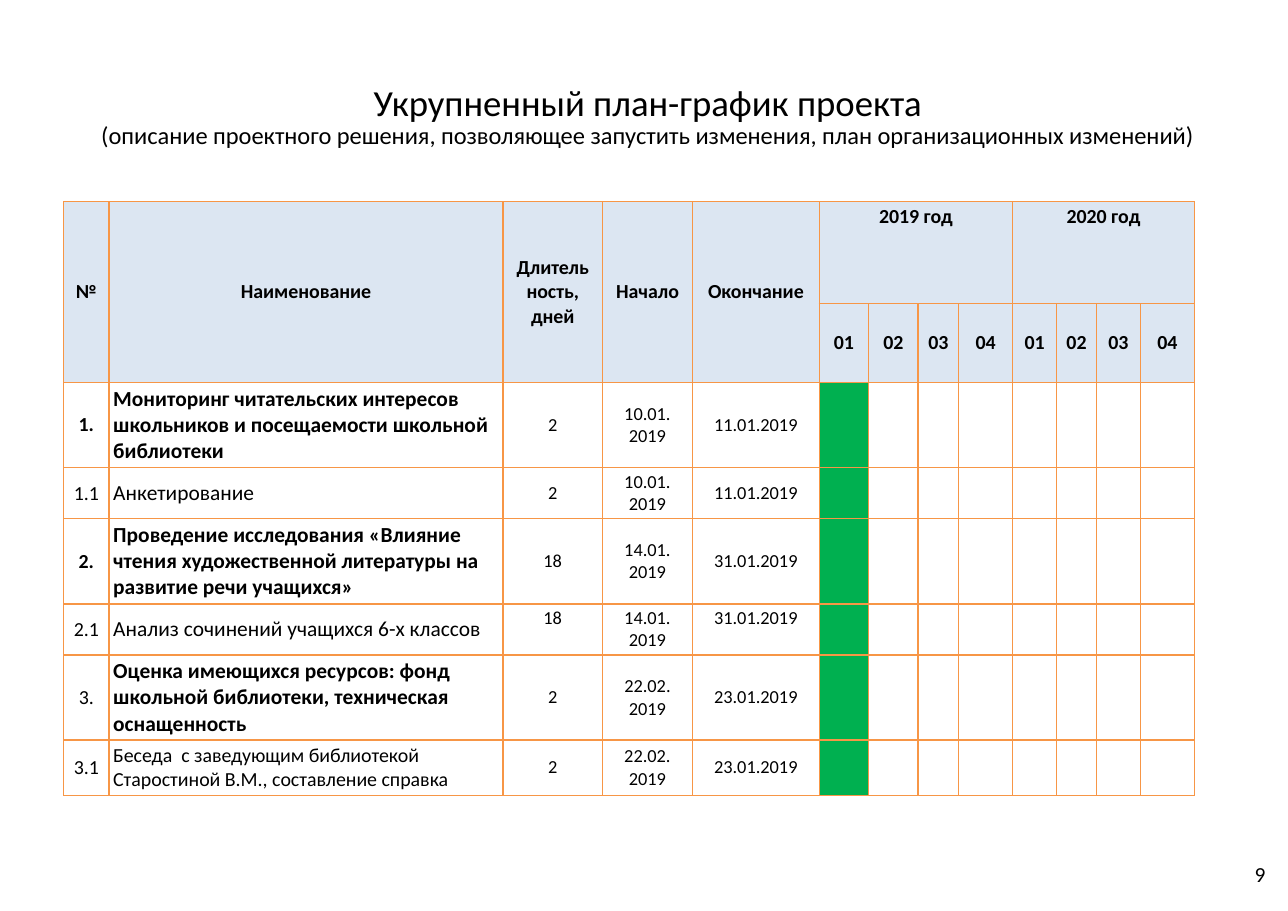
from dataclasses import dataclass

from lxml import etree
from pptx import Presentation
from pptx import util as u
from pptx.dml.color import RGBColor
from pptx.enum import text
from pptx.oxml import ns

FONT = "Calibri"
BLACK, WHITE = "000000", "FFFFFF"
HEADER_FILL, DONE_FILL, BORDER = "DCE6F2", "00B050", "F79646"
LEFT, CENTER, RIGHT = text.PP_ALIGN.LEFT, text.PP_ALIGN.CENTER, text.PP_ALIGN.RIGHT
TOP, MIDDLE = text.MSO_ANCHOR.TOP, text.MSO_ANCHOR.MIDDLE

COL_WIDTHS = [1.04, 9.09, 2.29, 2.08, 2.92, 1.14, 1.14, 0.94, 1.24, 1.02, 0.91, 1.02, 1.24]
ROW_HEIGHTS = [2.35, 1.82, 1.96, 1.18, 1.96, 1.18, 1.96, 1.27]
HEADINGS = ["№", "Наименование", "Длительность, дней", "Начало", "Окончание"]
YEARS = ["2019 год", "2020 год"]
QUARTERS = ["01", "02", "03", "04"]
WIDE, NARROW = 0.25, 0.1


@dataclass
class Line:
    text: str
    size: float
    bold: bool = False


@dataclass
class Task:
    number: str
    name: str
    days: str
    start: str
    end: str
    number_bold: bool = False
    name_bold: bool = False
    name_size: float = 14
    anchor: text.MSO_ANCHOR = MIDDLE


TASKS = [
    Task("1.", "Мониторинг читательских интересов школьников и посещаемости школьной библиотеки",
         "2", "10.01.\n2019", "11.01.2019", number_bold=True, name_bold=True),
    Task("1.1", "Анкетирование", "2", "10.01.\n2019", "11.01.2019"),
    Task("2.", "Проведение исследования «Влияние чтения художественной литературы "
         "на развитие речи учащихся»",
         "18", "14.01.\n2019", "31.01.2019", number_bold=True, name_bold=True),
    Task("2.1", "Анализ сочинений учащихся 6-х классов", "18", "14.01.\n2019", "31.01.2019",
         anchor=TOP),
    Task("3.", "Оценка имеющихся ресурсов: фонд школьной библиотеки, техническая оснащенность",
         "2", "22.02. 2019", "23.01.2019", name_bold=True),
    Task("3.1", "Беседа  с заведующим библиотекой Старостиной В.М., составление справка",
         "2", "22.02.\n2019", "23.01.2019", name_size=13),
]


def rgb(value: str) -> RGBColor:
    return RGBColor.from_string(value)


def write(tf, lines: list[Line], align, spacing: float = 1.0) -> None:
    for i, line in enumerate(lines):
        p = tf.add_paragraph() if i else tf.paragraphs[0]
        p.alignment = align
        p.line_spacing = spacing
        r = p.add_run()
        r.text = line.text
        r.font.name = FONT
        r.font.size = u.Pt(line.size)
        r.font.bold = line.bold
        r.font.color.rgb = rgb(BLACK)


def add_text(s, left: float, top: float, width: float, height: float,
             lines: list[Line], align, spacing: float = 1.0) -> None:
    sp = s.shapes.add_textbox(u.Cm(left), u.Cm(top), u.Cm(width), u.Cm(height))
    tf = sp.text_frame
    tf.word_wrap = True
    tf.vertical_anchor = MIDDLE
    tf.margin_left = tf.margin_right = u.Cm(0.28)
    tf.margin_top = tf.margin_bottom = u.Cm(0.15)
    write(tf, lines, align, spacing)


def style_cell(cell, fill: str) -> None:
    """Outline the cell on all four sides and fill it."""
    tc_pr = cell._tc.get_or_add_tcPr()
    for side in ("a:lnL", "a:lnR", "a:lnT", "a:lnB"):
        ln = etree.SubElement(tc_pr, ns.qn(side), w=str(u.Pt(1)))
        solid = etree.SubElement(ln, ns.qn("a:solidFill"))
        etree.SubElement(solid, ns.qn("a:srgbClr"), val=BORDER)
    cell.fill.solid()
    cell.fill.fore_color.rgb = rgb(fill)


def fill_cell(cell, content: str, size: float, bold: bool = False, align=CENTER,
              side: float = WIDE, anchor=MIDDLE) -> None:
    cell.margin_left = cell.margin_right = u.Cm(side)
    cell.margin_top = cell.margin_bottom = u.Cm(0.07)
    cell.vertical_anchor = anchor
    write(cell.text_frame, [Line(t, size, bold) for t in content.split("\n")], align)


def add_header(table) -> None:
    for col, heading in enumerate(HEADINGS):
        table.cell(0, col).merge(table.cell(1, col))
        fill_cell(table.cell(0, col), heading, 13, True)
    for i, year in enumerate(YEARS):
        first = len(HEADINGS) + i * len(QUARTERS)
        table.cell(0, first).merge(table.cell(0, first + len(QUARTERS) - 1))
        fill_cell(table.cell(0, first), year, 13, True, anchor=TOP)
        for j, quarter in enumerate(QUARTERS):
            fill_cell(table.cell(1, first + j), quarter, 13, True, side=NARROW)


def add_task(table, row: int, task: Task) -> None:
    fill_cell(table.cell(row, 0), task.number, 13, task.number_bold, side=NARROW)
    fill_cell(table.cell(row, 1), task.name, task.name_size, task.name_bold, LEFT, NARROW)
    fill_cell(table.cell(row, 2), task.days, 12, anchor=task.anchor)
    fill_cell(table.cell(row, 3), task.start, 12)
    fill_cell(table.cell(row, 4), task.end, 12, anchor=task.anchor)


def add_schedule(s) -> None:
    frame = s.shapes.add_table(len(ROW_HEIGHTS), len(COL_WIDTHS), u.Cm(1.47), u.Cm(4.65),
                               u.Cm(sum(COL_WIDTHS)), u.Cm(sum(ROW_HEIGHTS)))
    table = frame.table
    table.first_row = table.horz_banding = False
    for column, width in zip(table.columns, COL_WIDTHS):
        column.width = u.Cm(width)
    for row, height in zip(table.rows, ROW_HEIGHTS):
        row.height = u.Cm(height)
    for row in range(len(ROW_HEIGHTS)):
        for col in range(len(COL_WIDTHS)):
            body_fill = DONE_FILL if col == len(HEADINGS) else WHITE
            style_cell(table.cell(row, col), HEADER_FILL if row < 2 else body_fill)
    add_header(table)
    for row, task in enumerate(TASKS, start=2):
        add_task(table, row, task)


def main() -> None:
    prs = Presentation()
    prs.slide_width, prs.slide_height = u.Cm(29.7), u.Cm(21)
    s = prs.slides.add_slide(prs.slide_layouts[6])
    add_text(s, 1.3, 1.27, 27.28, 2.9, [
        Line("Укрупненный план-график проекта", 24),
        Line("(описание проектного решения, позволяющее запустить изменения, "
             "план организационных изменений)", 16),
    ], CENTER, 0.85)
    add_schedule(s)
    add_text(s, 22.53, 19.58, 6.93, 1.12, [Line("9", 14)], RIGHT)
    prs.save("out.pptx")


if __name__ == "__main__":
    main()
